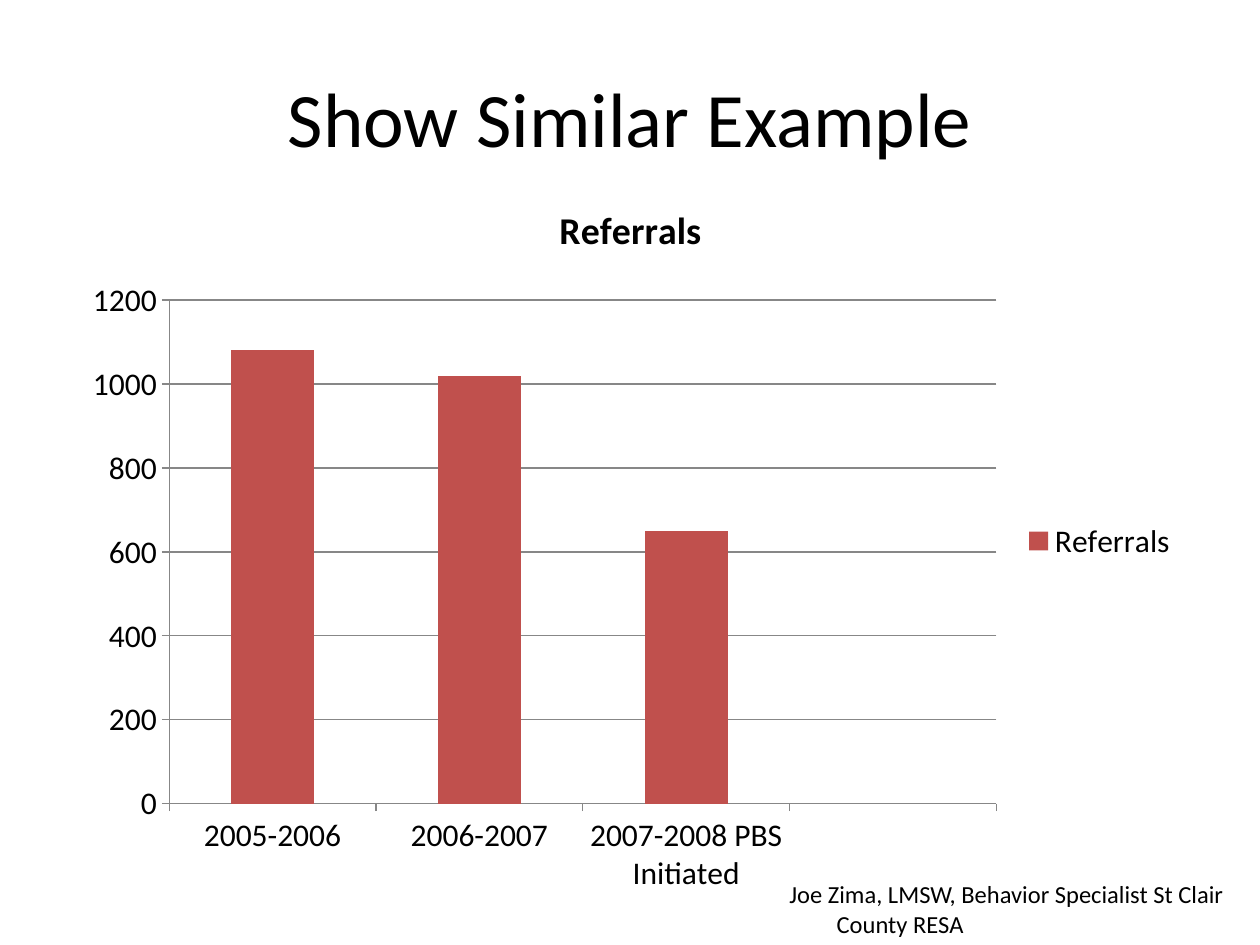
from pptx import Presentation
from pptx import util as u
from pptx.chart import data as cd
from pptx.dml import color as dc
from pptx.enum import chart as ec
from pptx.enum import text as et

Pt = u.Pt


def rgb(code):
    return dc.RGBColor.from_string(code)


class Deck:
    face = "Calibri"
    ink = "000000"
    rule = "878787"
    bar = "C0504D"

    def __init__(self):
        self.prs = Presentation()
        self.prs.slide_width, self.prs.slide_height = Pt(720), Pt(540)
        self.slide = self.prs.slides.add_slide(self.prs.slide_layouts[5])

    def font(self, font, size, bold=False):
        font.name, font.size, font.bold = self.face, Pt(size), bold
        font.color.rgb = rgb(self.ink)

    def run(self, para, words, size, bold=False):
        run = para.add_run()
        run.text = words
        self.font(run.font, size, bold)

    def title(self, words, x, y, w, h):
        box = self.slide.shapes.title
        box.left, box.top, box.width, box.height = map(Pt, (x, y, w, h))
        box.text_frame.vertical_anchor = et.MSO_ANCHOR.MIDDLE
        para = box.text_frame.paragraphs[0]
        para.alignment = et.PP_ALIGN.CENTER
        self.run(para, words, 44)

    def chart(self, name, cats, vals, x, y, w, h):
        data = cd.CategoryChartData()
        data.categories = cats
        data.add_series(name, vals)
        chart = self.slide.shapes.add_chart(
            ec.XL_CHART_TYPE.COLUMN_CLUSTERED, *map(Pt, (x, y, w, h)), data
        ).chart
        self.font(chart.font, 18)
        chart.has_title = True
        self.run(chart.chart_title.text_frame.paragraphs[0], name, 21.6, True)
        chart.chart_title.include_in_layout = False
        chart.has_legend = True
        chart.legend.position = ec.XL_LEGEND_POSITION.RIGHT
        chart.legend.include_in_layout = False

        plot = chart.plots[0]
        plot.gap_width = 150
        plot.vary_by_categories = False
        fill = plot.series[0].format.fill
        fill.solid()
        fill.fore_color.rgb = rgb(self.bar)

        axis = chart.value_axis
        axis.minimum_scale, axis.maximum_scale, axis.major_unit = 0, 1200, 200
        axis.has_major_gridlines = True
        for part in (axis, chart.category_axis):
            part.major_tick_mark = ec.XL_TICK_MARK.OUTSIDE
        for part in (axis, chart.category_axis, axis.major_gridlines):
            part.format.line.color.rgb = rgb(self.rule)
            part.format.line.width = Pt(0.75)

    def note(self, words, x, y, w, h, hang):
        box = self.slide.shapes.add_textbox(*map(Pt, (x, y, w, h)))
        box.text_frame.word_wrap = True
        para = box.text_frame.paragraphs[0]
        props = para._p.get_or_add_pPr()
        props.set("marL", str(Pt(hang)))
        props.set("indent", str(-Pt(hang)))
        self.run(para, words, 14)


def main():
    deck = Deck()
    deck.title("Show Similar Example", 36, 21.6, 648, 90)
    deck.chart(
        "Referrals",
        ["2005-2006", "2006-2007", "2007-2008 PBS Initiated", ""],
        [1080, 1020, 650, None],
        40.3, 100, 640, 418.3,
    )
    deck.note(
        "Joe Zima, LMSW, Behavior Specialist St Clair County RESA",
        444, 499, 276, 41, 27,
    )
    deck.prs.save("out.pptx")


if __name__ == "__main__":
    main()
